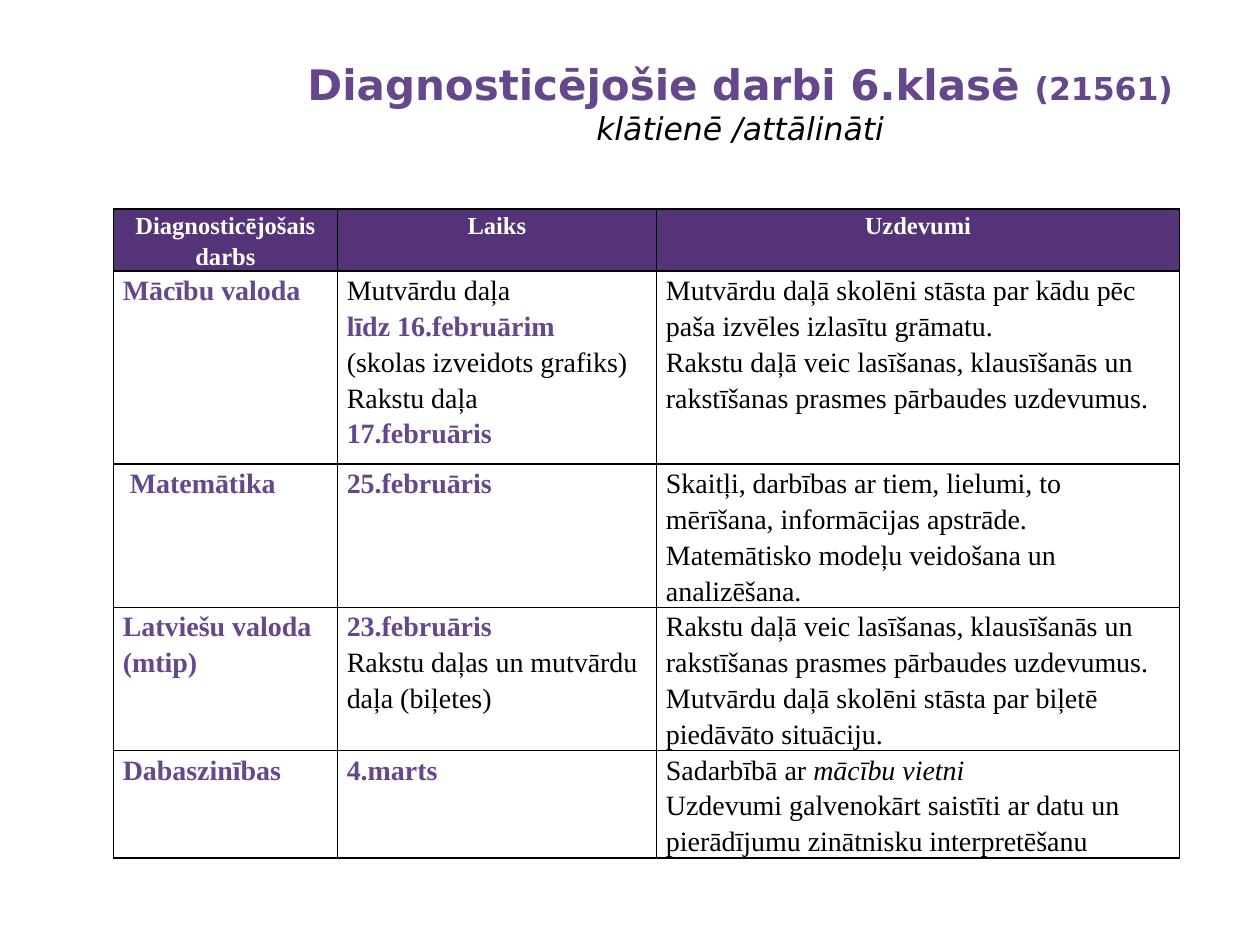
from lxml.etree import SubElement
from pptx import Presentation
from pptx.dml.color import RGBColor
from pptx.enum.text import MSO_ANCHOR as Anchor, MSO_AUTO_SIZE as Fit, PP_ALIGN as Align
from pptx.oxml.ns import qn
from pptx.util import Pt

PURPLE = RGBColor(0x66, 0x47, 0x8B)
DARK = RGBColor(0x54, 0x33, 0x78)
BLACK = RGBColor(0, 0, 0)
WHITE = RGBColor(255, 255, 255)
SANS, SERIF = "DejaVu Sans", "Times New Roman"

# Each run: text, size, colour, bold, italic
TITLE = [
    ("Diagnosticējošie darbi 6.klasē ", 24, PURPLE, True, False),
    ("(21561)", 18, PURPLE, True, False),
    ("klātienē /attālināti", 18, BLACK, False, True),
]
HEADS = ["Diagnosticējošais darbs", "Laiks", "Uzdevumi"]

# A cell is a list of paragraphs, a paragraph a list of (text, style) runs
KEY, BODY, ITAL = (PURPLE, True, False), (BLACK, False, False), (BLACK, False, True)
ROWS = [
    [
        [[("Mācību valoda", KEY)]],
        [[("Mutvārdu daļa", BODY)], [("līdz 16.februārim", KEY)],
         [("(skolas izveidots grafiks)", BODY)], [("Rakstu daļa", BODY)],
         [("17.februāris", KEY)]],
        [[("Mutvārdu daļā skolēni stāsta par kādu pēc paša izvēles izlasītu grāmatu.", BODY)],
         [("Rakstu daļā veic lasīšanas, klausīšanās un rakstīšanas prasmes "
           "pārbaudes uzdevumus.", BODY)]],
    ],
    [
        [[(" Matemātika", KEY)]],
        [[("25.februāris", KEY)]],
        [[("Skaitļi, darbības ar tiem, lielumi, to mērīšana, informācijas apstrāde.", BODY)],
         [("Matemātisko modeļu veidošana un analizēšana.", BODY)]],
    ],
    [
        [[("Latviešu valoda (mtip)", KEY)]],
        [[("23.februāris", KEY)], [("Rakstu daļas un mutvārdu daļa (biļetes)", BODY)]],
        [[("Rakstu daļā veic lasīšanas, klausīšanās un rakstīšanas prasmes "
           "pārbaudes uzdevumus. Mutvārdu daļā skolēni stāsta par biļetē "
           "piedāvāto situāciju.", BODY)]],
    ],
    [
        [[("Dabaszinības", KEY)]],
        [[("4.marts", KEY)]],
        [[("Sadarbībā ar ", BODY), ("mācību vietni", ITAL)],
         [("Uzdevumi galvenokārt saistīti ar datu un pierādījumu zinātnisku "
           "interpretēšanu", BODY)]],
    ],
]
WIDTHS = [128, 182.4, 298.8]
HEIGHTS = [35.5, 110.3, 81.5, 81.5, 61]


def style(run, face, size, color, bold, ital):
    font = run.font
    font.name, font.size = face, Pt(size)
    font.bold, font.italic = bold, ital
    font.color.rgb = color


def border(cell):
    props = cell._tc.get_or_add_tcPr()
    for i, side in enumerate(("lnL", "lnR", "lnT", "lnB")):
        line = props.makeelement(qn("a:" + side), {"w": str(Pt(1))})
        fill = SubElement(line, qn("a:solidFill"))
        SubElement(fill, qn("a:srgbClr"), val=str(BLACK))
        props.insert(i, line)


def fill_cell(cell, paras, size, back=None, align=Align.LEFT):
    cell.margin_left = cell.margin_right = Pt(5.4)
    cell.margin_top = cell.margin_bottom = 0
    if back is None:
        cell.fill.background()
    else:
        cell.fill.solid()
        cell.fill.fore_color.rgb = back
    border(cell)
    frame = cell.text_frame
    for i, runs in enumerate(paras):
        para = frame.add_paragraph() if i else frame.paragraphs[0]
        para.alignment, para.line_spacing = align, 1.15
        for text, look in runs:
            run = para.add_run()
            run.text = text
            style(run, SERIF, size, *look)


def add_title(slide):
    title = slide.shapes.title
    title.left, title.top, title.width, title.height = Pt(162), Pt(29.7), Pt(522), Pt(81.4)
    frame = title.text_frame
    frame.word_wrap, frame.auto_size = True, Fit.NONE
    frame.vertical_anchor = Anchor.TOP
    para = frame.paragraphs[0]
    para.alignment = Align.CENTER
    for i, (text, *look) in enumerate(TITLE):
        if i == 2:
            para.add_line_break()
        run = para.add_run()
        run.text = text
        style(run, SANS, *look)


def add_plan(slide):
    grid = slide.shapes.add_table(
        len(HEIGHTS), len(WIDTHS), Pt(64.8), Pt(119.4),
        Pt(sum(WIDTHS)), Pt(sum(HEIGHTS))).table
    for col, width in zip(grid.columns, WIDTHS):
        col.width = Pt(width)
    for row, height in zip(grid.rows, HEIGHTS):
        row.height = Pt(height)
    for c, head in enumerate(HEADS):
        fill_cell(grid.cell(0, c), [[(head, (WHITE, True, False))]], 14, DARK, Align.CENTER)
    for r, row in enumerate(ROWS, 1):
        for c, paras in enumerate(row):
            fill_cell(grid.cell(r, c), paras, 16)


def main():
    deck = Presentation()
    deck.slide_width, deck.slide_height = Pt(720), Pt(540)
    slide = deck.slides.add_slide(deck.slide_layouts[5])
    add_title(slide)
    add_plan(slide)
    deck.save("out.pptx")


if __name__ == "__main__":
    main()
